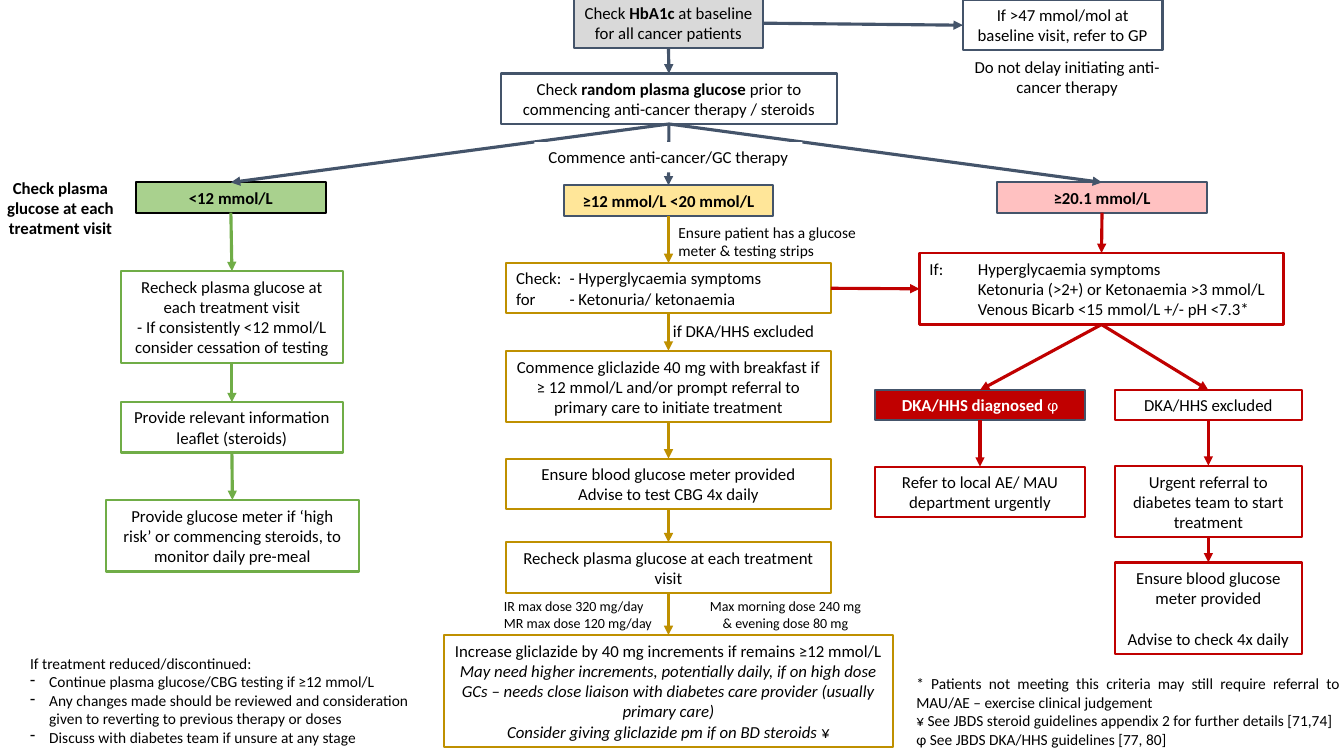
"""Draw a flow chart for glucose checks during cancer therapy."""
import dataclasses
import typing

import lxml.etree
import pptx
import pptx.dml.color
import pptx.enum.shapes
import pptx.enum.text
import pptx.oxml.ns
import pptx.presentation
import pptx.shapes.autoshape
import pptx.slide
import pptx.text.text
import pptx.util

RGB = pptx.dml.color.RGBColor
BLACK = RGB(0x00, 0x00, 0x00)
WHITE = RGB(0xFF, 0xFF, 0xFF)
SLATE = RGB(0x44, 0x54, 0x6A)
GREY = RGB(0xD9, 0xD9, 0xD9)
GREEN = RGB(0x70, 0xAD, 0x47)
LIME = RGB(0xA9, 0xD1, 0x8E)
GOLD = RGB(0xBF, 0x90, 0x00)
CREAM = RGB(0xFF, 0xE6, 0x99)
RED = RGB(0xC0, 0x00, 0x00)
PINK = RGB(0xFF, 0xC1, 0xC1)

PX = 9144
ALIGN = pptx.enum.text.PP_ALIGN
LEFT, MID, FULL = ALIGN.LEFT, ALIGN.CENTER, ALIGN.JUSTIFY
TOP, WEST, BASE, EAST = range(4)
qn = pptx.oxml.ns.qn


@dataclasses.dataclass(frozen=True)
class Para:
    """A paragraph; text between bars has its bold or italic switched."""
    text: str
    align: ALIGN = MID
    bold: bool = False
    slant: bool = False
    hang: int = 0
    bullet: str = ""
    gap: float = 0


@dataclasses.dataclass(frozen=True)
class Box:
    """A framed step of the chart."""
    name: str
    left: int
    top: int
    width: int
    height: int
    edge: RGB
    paras: tuple[Para, ...]
    fill: typing.Optional[RGB] = None
    ink: RGB = BLACK


@dataclasses.dataclass(frozen=True)
class Arrow:
    """An arrow that joins two steps."""
    start: str
    end: str
    color: RGB
    leave: int = BASE
    enter: int = TOP


@dataclasses.dataclass(frozen=True)
class Label:
    """A note without a frame."""
    left: int
    top: int
    width: int
    height: int
    size: int
    paras: tuple[Para, ...]
    fill: typing.Optional[RGB] = None


BOXES = (
    Box("base", 569, -2, 188, 50, SLATE,
        (Para("Check |HbA1c| at baseline for all cancer patients"),), GREY),
    Box("refer", 955, 0, 198, 50, SLATE,
        (Para("If >47 mmol/mol at baseline visit, refer to GP"),)),
    Box("random", 497, 73, 333, 50, SLATE,
        (Para("Check |random plasma glucose| prior to commencing anti-cancer therapy / steroids"),)),
    Box("low", 135, 181, 188, 30, BLACK, (Para("<12 mmol/L", bold=True),), LIME),
    Box("middle", 559, 184, 208, 30, SLATE, (Para("≥12 mmol/L <20 mmol/L", bold=True),), CREAM),
    Box("high", 989, 181, 208, 30, SLATE, (Para("≥20.1 mmol/L", bold=True),), PINK),
    Box("recheck", 120, 269, 220, 91, GREEN,
        (Para("Recheck plasma glucose at each treatment visit"),
         Para("- If consistently <12 mmol/L consider cessation of testing"))),
    Box("leaflet", 120, 399, 220, 50, GREEN,
        (Para("Provide relevant information leaflet (steroids)"),)),
    Box("meter", 105, 496, 251, 71, GREEN,
        (Para("Provide glucose meter if ‘high risk’ or commencing steroids, to monitor daily pre-meal"),)),
    Box("check", 502, 261, 322, 50, GOLD,
        (Para("Check:\t- Hyperglycaemia symptoms", LEFT, hang=53),
         Para("for\t- Ketonuria/ ketonaemia", LEFT, hang=53))),
    Box("begin", 502, 348, 322, 71, GOLD,
        (Para("Commence gliclazide 40 mg with breakfast if ≥ 12 mmol/L and/or prompt referral to "
              "primary care to initiate treatment"),)),
    Box("test", 502, 455, 322, 50, GOLD,
        (Para("Ensure blood glucose meter provided"), Para("Advise to test CBG 4x daily"))),
    Box("visit", 502, 538, 322, 50, GOLD,
        (Para("Recheck plasma glucose at each treatment visit"),)),
    Box("increase", 440, 630, 446, 111, GOLD,
        (Para("Increase gliclazide by 40 mg increments if remains ≥12 mmol/L"),
         Para("May need higher increments, potentially daily, if on high dose GCs – needs close "
              "liaison with diabetes care provider (usually primary care)", slant=True),
         Para("Consider giving gliclazide pm if on BD steroids| ¥|", slant=True))),
    Box("signs", 912, 251, 361, 71, RED,
        (Para("If:\tHyperglycaemia symptoms", LEFT, hang=48),
         Para("\tKetonuria (>2+) or Ketonaemia >3 mmol/L", LEFT, hang=48),
         Para("\tVenous Bicarb <15 mmol/L +/- pH <7.3*", LEFT, hang=48))),
    Box("found", 868, 387, 208, 30, SLATE, (Para("DKA/HHS diagnosed |φ|", bold=True),), RED, WHITE),
    Box("clear", 1106, 387, 185, 30, RED, (Para("DKA/HHS excluded"),)),
    Box("local", 868, 463, 208, 50, RED, (Para("Refer to local AE/ MAU department urgently"),)),
    Box("urgent", 1106, 462, 185, 71, RED,
        (Para("Urgent referral to diabetes team to start treatment"),)),
    Box("daily", 1106, 558, 185, 91, RED,
        (Para("Ensure blood glucose meter provided"),
         Para("Advise to check 4x daily", gap=14.6))),
)

ARROWS = (
    Arrow("base", "random", SLATE),
    Arrow("base", "refer", SLATE, EAST, WEST),
    *(Arrow("random", band, SLATE) for band in ("low", "middle", "high")),
    *(Arrow(start, end, color)
      for color, chain in (
          (GREEN, ("low", "recheck", "leaflet", "meter")),
          (GOLD, ("middle", "check", "begin", "test", "visit", "increase")),
          (RED, ("high", "signs", "found", "local")),
          (RED, ("signs", "clear", "urgent", "daily")))
      for start, end in zip(chain, chain[1:])),
    Arrow("check", "signs", RED, EAST, WEST),
)

LABELS = (
    Label(955, 51, 207, 50, 12, (Para("Do not delay initiating anti-cancer therapy"),)),
    Label(530, 141, 266, 30, 12, (Para("Commence anti-cancer/GC therapy"),), WHITE),
    Label(-4, 171, 128, 71, 12, (Para("Check plasma glucose at each treatment visit", bold=True),)),
    Label(663, 216, 212, 47, 11, (Para("Ensure patient has a glucose meter & testing strips", LEFT),)),
    Label(648, 313, 179, 30, 12, (Para("if DKA/HHS excluded"),)),
    Label(490, 588, 172, 43, 10,
          (Para("IR max dose 320 mg/day", LEFT), Para("MR max dose 120 mg/day", LEFT))),
    Label(691, 588, 176, 43, 10, (Para("Max morning dose 240 mg"), Para("& evening dose 80 mg"))),
    Label(20, 644, 420, 103, 11,
          (Para("If treatment reduced/discontinued:", LEFT),
           *(Para(text, LEFT, hang=19, bullet="-") for text in (
               "Continue plasma glucose/CBG testing if ≥12 mmol/L",
               "Any changes made should be reviewed and consideration given to reverting to "
               "previous therapy or doses",
               "Discuss with diabetes team if unsure at any stage")))),
    Label(899, 664, 440, 85, 11, tuple(Para(text, FULL) for text in (
        "* Patients not meeting this criteria may still require referral to MAU/AE – exercise "
        "clinical judgement",
        "¥ See JBDS steroid guidelines appendix 2 for further details [71,74]",
        "φ See JBDS DKA/HHS guidelines [77, 80]"))),
)


def write(frame: pptx.text.text.TextFrame, paras: tuple[Para, ...], size: int, ink: RGB) -> None:
    """Fill a text frame with paragraphs."""
    frame.word_wrap = True
    frame.auto_size = pptx.enum.text.MSO_AUTO_SIZE.SHAPE_TO_FIT_TEXT
    for index, para in enumerate(paras):
        line = frame.add_paragraph() if index else frame.paragraphs[0]
        line.alignment = para.align
        props = line._p.get_or_add_pPr()
        if para.hang:
            props.set("marL", str(para.hang * PX))
            props.set("indent", str(-para.hang * PX))
        if para.bullet:
            lxml.etree.SubElement(props, qn("a:buChar"), char=para.bullet)
        if para.gap:
            line.space_before = pptx.util.Pt(para.gap)
        font = line.font
        font.name, font.size = "Calibri", pptx.util.Pt(size)
        font.bold, font.italic = para.bold, para.slant
        font.color.rgb = ink
        for turn, text in enumerate(para.text.split("|")):
            if text:
                run = line.add_run()
                run.text = text
                if turn % 2 and para.slant:
                    run.font.italic = False
                elif turn % 2:
                    run.font.bold = not para.bold


def place(slide: pptx.slide.Slide, item: typing.Union[Box, Label]) -> pptx.shapes.autoshape.Shape:
    """Add the outline of a step or a note."""
    spot = [length * PX for length in (item.left, item.top, item.width, item.height)]
    if isinstance(item, Label):
        shape = slide.shapes.add_textbox(*spot)
    else:
        shape = slide.shapes.add_shape(pptx.enum.shapes.MSO_SHAPE.RECTANGLE, *spot)
        shape.shadow.inherit = False
        shape.line.color.rgb = item.edge
        shape.line.width = pptx.util.Pt(1.5)
    if item.fill is None:
        shape.fill.background()
    else:
        shape.fill.solid()
        shape.fill.fore_color.rgb = item.fill
    return shape


def join(slide: pptx.slide.Slide, arrow: Arrow,
         steps: dict[str, pptx.shapes.autoshape.Shape]) -> None:
    """Join two steps with an arrow."""
    link = slide.shapes.add_connector(pptx.enum.shapes.MSO_CONNECTOR.STRAIGHT, 0, 0, 0, 0)
    link.begin_connect(steps[arrow.start], arrow.leave)
    link.end_connect(steps[arrow.end], arrow.enter)
    link.line.color.rgb = arrow.color
    link.line.width = pptx.util.Pt(2.25)
    props = link.element.spPr
    lxml.etree.SubElement(props.find(qn("a:ln")), qn("a:tailEnd"), type="triangle")
    lxml.etree.SubElement(props, qn("a:effectLst"))


def main() -> None:
    """Build and save the slide."""
    deck = pptx.Presentation()
    deck.slide_width, deck.slide_height = 1333 * PX, 750 * PX
    slide = deck.slides.add_slide(deck.slide_layouts[6])
    steps = {}
    for box in BOXES:
        steps[box.name] = place(slide, box)
        write(steps[box.name].text_frame, box.paras, 12, box.ink)
    for arrow in ARROWS:
        join(slide, arrow, steps)
    for label in LABELS:
        write(place(slide, label).text_frame, label.paras, label.size, BLACK)
    deck.save("out.pptx")


if __name__ == "__main__":
    main()
